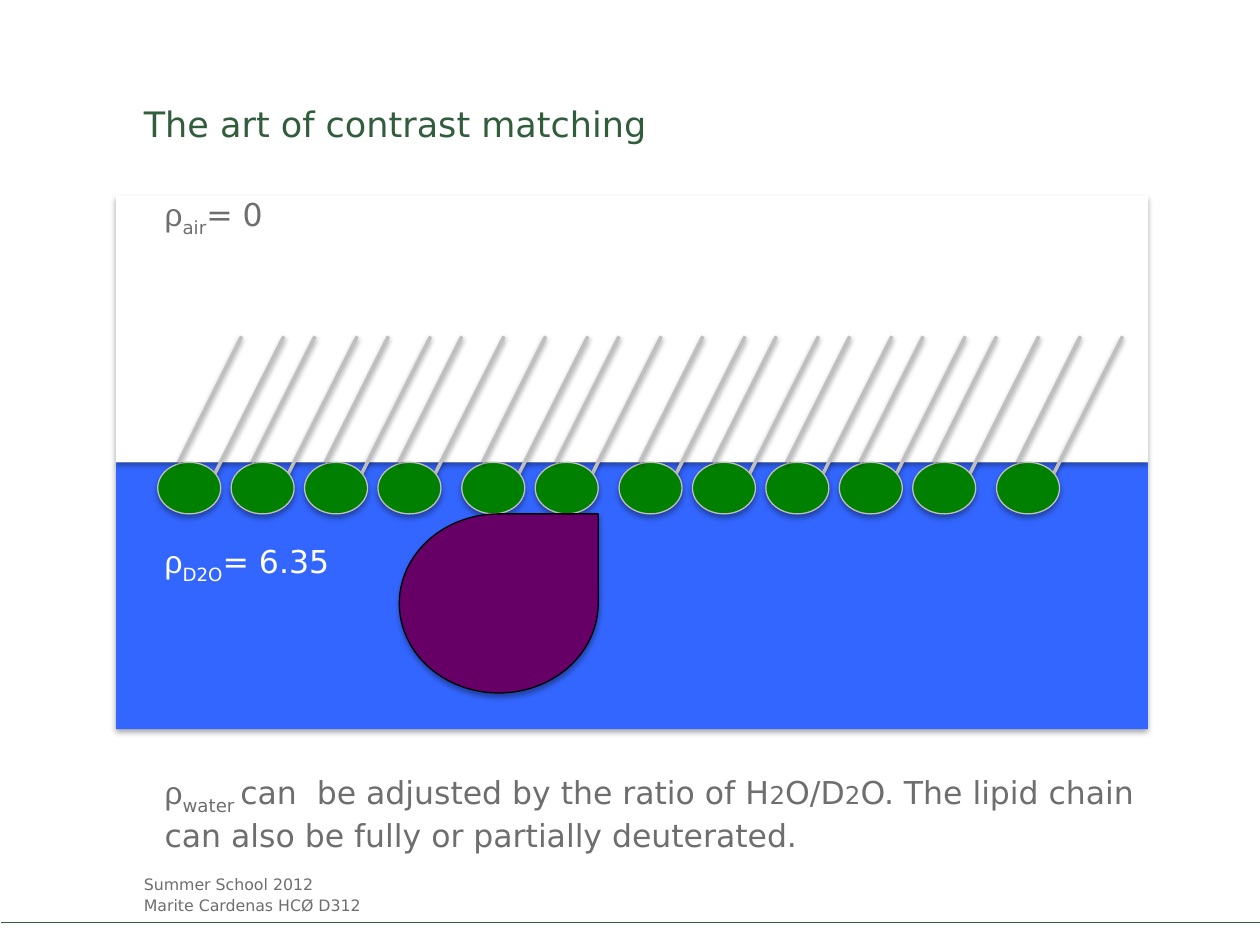
from lxml.etree import SubElement
from pptx import Presentation
from pptx.dml.color import RGBColor
from pptx.enum.shapes import MSO_CONNECTOR, MSO_SHAPE as Shape
from pptx.enum.text import MSO_ANCHOR, MSO_AUTO_SIZE, PP_ALIGN
from pptx.oxml.ns import qn
from pptx.util import Cm, Pt

TITLE_GREEN = RGBColor(0x32, 0x5D, 0x3D)
RULE_GREEN = RGBColor(0x32, 0x60, 0x3D)
GREY = RGBColor(0x6E, 0x6E, 0x6E)
CHAIN_GREY = RGBColor(0xBF, 0xBF, 0xBF)
WHITE = RGBColor(0xFF, 0xFF, 0xFF)
BLACK = RGBColor(0, 0, 0)
WATER_BLUE = RGBColor(0x33, 0x66, 0xFF)
HEAD_GREEN = RGBColor(0, 0x80, 0)
PROTEIN_PURPLE = RGBColor(0x66, 0, 0x66)

# Films and lipids, in cm
FILM_LEFT, FILM_WIDTH, FILM_HEIGHT = 2.34, 20.8, 5.38
AIR_TOP = 3.94
SURFACE = AIR_TOP + FILM_HEIGHT
HEAD_WIDTH, HEAD_HEIGHT, HEAD_GAP = 1.27, 1.04, 0.21
FIRST_HEAD = 3.18
CLUSTERS = (4, 2, 5, 1)
CHAIN_TOP = 6.78


class ContrastSlide:
    font = "DejaVu Sans"
    symbol_font = "Arial"
    body_size = 18

    def __init__(self, slide):
        self.slide = slide

    def effects(self, shape, distance=None, opacity=35):
        """Replace the theme effect by a downward shadow, or by none."""
        effect_list = SubElement(shape._element.spPr, qn("a:effectLst"))
        if distance is None:
            return
        shadow = SubElement(effect_list, qn("a:outerShdw"), blurRad=str(Pt(3.15)),
                            dist=str(Pt(distance)), dir="5400000", rotWithShape="0")
        color = SubElement(shadow, qn("a:srgbClr"), val=str(BLACK))
        SubElement(color, qn("a:alpha"), val=str(opacity * 1000))

    def line(self, start, end, color, width, parent=None):
        shapes = (parent or self.slide).shapes
        line = shapes.add_connector(MSO_CONNECTOR.STRAIGHT, *map(Cm, start + end))
        line.line.color.rgb = color
        line.line.width = Pt(width)
        return line

    def shape(self, kind, box, fill, outline=None, parent=None):
        shape = (parent or self.slide).shapes.add_shape(kind, *map(Cm, box))
        shape.fill.solid()
        shape.fill.fore_color.rgb = fill
        if outline is None:
            shape.line.fill.background()
        else:
            shape.line.color.rgb = outline
            shape.line.width = Pt(0.75)
        self.effects(shape, 1.8)

    def chain(self, start, end, lipid):
        self.effects(self.line(start, end, CHAIN_GREY, 2, lipid), 1.6, 38)

    def lipid(self, left):
        """Group a head with one chain behind it and one in front."""
        lipid = self.slide.shapes.add_group_shape()
        self.chain((left + 2.54, CHAIN_TOP), (left + 1.06, SURFACE + 0.41), lipid)
        self.shape(Shape.OVAL, (left, SURFACE, HEAD_WIDTH, HEAD_HEIGHT),
                   HEAD_GREEN, CHAIN_GREY, lipid)
        self.chain((left + 1.69, CHAIN_TOP), (left + 0.42, SURFACE), lipid)

    def run(self, paragraph, text, color, size, font=None, subscript=False):
        run = paragraph.add_run()
        run.text = text
        run.font.color.rgb = color
        for name, value in {"name": font or self.font, "size": Pt(size)}.items():
            setattr(run.font, name, value)
        if subscript:
            run._r.get_or_add_rPr().set("baseline", "-25000")

    def frame(self, shape, **settings):
        for name, value in settings.items():
            setattr(shape.text_frame, name, value)
        return shape.text_frame

    def flat_frame(self, shape, **settings):
        sides = ("left", "top", "right", "bottom")
        margins = {f"margin_{side}": 0 for side in sides}
        return self.frame(shape, word_wrap=True, **margins, **settings)

    def title(self, text, box):
        title = self.slide.shapes.title
        for name, value in zip(("left", "top", "width", "height"), box):
            setattr(title, name, Cm(value))
        frame = self.flat_frame(title, vertical_anchor=MSO_ANCHOR.BOTTOM)
        heading = frame.paragraphs[0]
        heading.alignment = PP_ALIGN.LEFT
        self.run(heading, text, TITLE_GREEN, 20)

    def footer(self, event, author, box):
        footer = self.slide.shapes.add_textbox(*map(Cm, box))
        frame = self.flat_frame(footer)
        self.run(frame.paragraphs[0], event, GREY, 9)
        author_line = frame.add_paragraph()
        author_line.line_spacing = 1.1
        self.run(author_line, author, GREY, 9)

    def density(self, medium, parts, top, height, color=GREY):
        """Write rho with its subscript, then (text, size) parts."""
        label = self.slide.shapes.add_textbox(Cm(3.07), Cm(top), Cm(20.07), Cm(height))
        frame = self.frame(label, word_wrap=True, auto_size=MSO_AUTO_SIZE.SHAPE_TO_FIT_TEXT)
        paragraph = frame.paragraphs[0]
        self.run(paragraph, "ρ", color, self.body_size, self.symbol_font)
        self.run(paragraph, medium, color, self.body_size, subscript=True)
        for text, size in parts:
            self.run(paragraph, text, color, size)


def main():
    deck = Presentation()
    deck.slide_width, deck.slide_height = Cm(25.4), Cm(19.05)
    page = ContrastSlide(deck.slides.add_slide(deck.slide_layouts[5]))

    page.footer("Summer School 2012", "Marite Cardenas HCØ D312", (2.9, 17.63, 19.96, 0.79))
    rule = page.line((25.4, 18.59), (0.03, 18.59), RULE_GREEN, 0.75)
    page.effects(rule)
    page.title("The art of contrast matching", (2.9, 1.32, 16.35, 1.6))

    for top, fill in ((SURFACE, WATER_BLUE), (AIR_TOP, WHITE)):
        page.shape(Shape.RECTANGLE, (FILM_LEFT, top, FILM_WIDTH, FILM_HEIGHT), fill)

    left = FIRST_HEAD
    for count in CLUSTERS:
        for _ in range(count):
            page.lipid(left)
            left += HEAD_WIDTH + HEAD_GAP
        left += HEAD_GAP

    page.density("air", [("= 0", 18)], 3.81, 1.03)
    page.density("D2O", [("= 6.35", 18)], 10.8, 1.03, WHITE)
    page.density("water ", [
        ("can  be adjusted by the ratio of H", 18), ("2", 14), ("O/D", 18), ("2", 14),
        ("O. The lipid chain can also be fully or partially deuterated.", 18),
    ], 15.46, 1.8)
    page.shape(Shape.TEAR, (8.05, SURFACE + HEAD_HEIGHT, 4.01, 3.61), PROTEIN_PURPLE, BLACK)

    deck.save("out.pptx")


if __name__ == "__main__":
    main()
